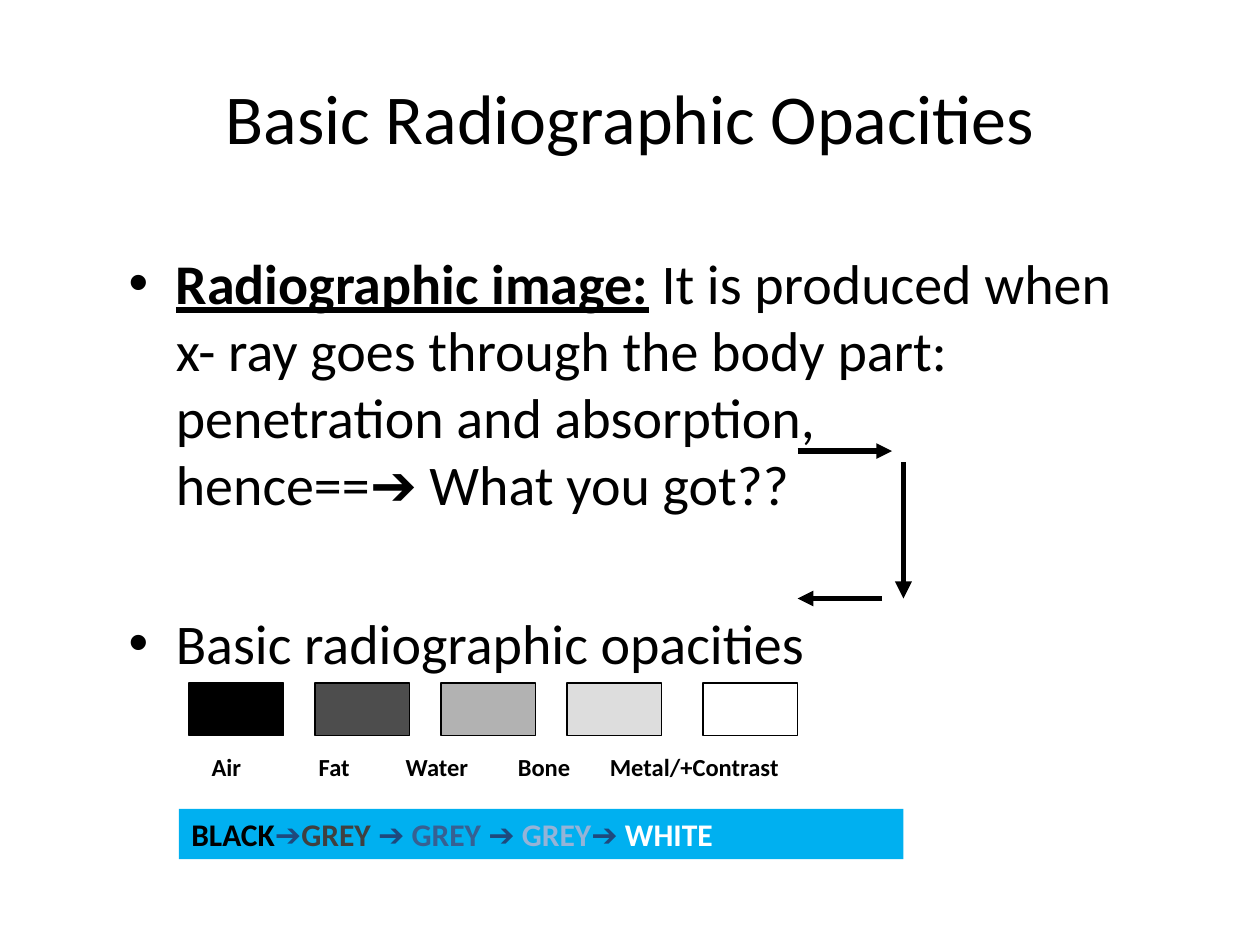
from dataclasses import dataclass

from lxml import etree
from pptx import Presentation
from pptx.dml.color import RGBColor
from pptx.enum import shapes, text
from pptx.oxml import ns
from pptx.util import Inches, Pt


@dataclass(frozen=True)
class Theme:
    font: str = "Calibri"
    black: str = "000000"
    white: str = "FFFFFF"
    strip: str = "00B0F0"
    arrow: str = "1F497D"
    title_size: int = 40
    body_size: int = 32
    strip_size: int = 18
    label_size: int = 14


THEME = Theme()

# Opacity, swatch left edge, swatch fill, label left edge
OPACITIES = [
    ("Air", 1.5, THEME.black, 1.68),
    ("Fat", 2.5, "4D4D4D", 2.53),
    ("Water", 3.5, "B2B2B2", 3.22),
    ("Bone", 4.5, "DDDDDD", 4.11),
    ("Metal/+Contrast", 5.58, THEME.white, 4.84),
]

# Start, end, width of each arrow
ARROWS = [
    ((6.33, 3.58), (7.08, 3.58), 3),
    ((7.17, 3.67), (7.17, 4.75), 3.25),
    ((7, 4.75), (6.33, 4.75), 3),
]

SHADES = [
    ("BLACK", THEME.black),
    ("➔", THEME.arrow),
    ("GREY", "404040"),
    (" ➔ ", THEME.arrow),
    ("GREY ", "376092"),
    ("➔ ", THEME.arrow),
    ("GREY", "95B3D7"),
    ("➔ ", THEME.arrow),
    ("WHITE", THEME.white),
]


def color(value):
    return RGBColor.from_string(value)


def style(paragraph, size, bold=None):
    font = paragraph.font
    font.name = THEME.font
    font.size = Pt(size)
    font.bold = bold
    font.color.rgb = color(THEME.black)


def place(shape, left, top, width, height):
    shape.left, shape.top = Inches(left), Inches(top)
    shape.width, shape.height = Inches(width), Inches(height)


def fill_title(title):
    place(title, 0.5, 0.3, 9, 1.25)
    title.text_frame.text = "Basic Radiographic Opacities"
    title.text_frame.auto_size = text.MSO_AUTO_SIZE.NONE
    style(title.text_frame.paragraphs[0], THEME.title_size)


def fill_body(body):
    place(body, 0.92, 1.92, 8.17, 4.07)
    frame = body.text_frame
    frame.auto_size = text.MSO_AUTO_SIZE.NONE

    definition = frame.paragraphs[0]
    term = definition.add_run()
    term.text = "Radiographic image:"
    term.font.bold = term.font.underline = True
    definition.add_run().text = (
        " It is produced when x- ray goes through the body part: "
        "penetration and absorption,"
    )

    question = frame.add_paragraph()
    question.text = "hence==➔ What you got??"
    properties = question._p.get_or_add_pPr()
    properties.set("indent", "0")
    etree.SubElement(properties, ns.qn("a:buNone"))

    opacities = frame.add_paragraph()
    opacities.text = "Basic radiographic opacities"

    for paragraph, space in ((definition, 0), (question, 0), (opacities, 52)):
        paragraph.space_before = Pt(space)
        style(paragraph, THEME.body_size)


def add_arrow(slide, start, end, width):
    connector = slide.shapes.add_connector(
        shapes.MSO_CONNECTOR.STRAIGHT, *map(Inches, start + end))
    connector.line.color.rgb = color(THEME.black)
    connector.line.width = Pt(width)
    line = connector.line._get_or_add_ln()
    etree.SubElement(line, ns.qn("a:tailEnd"), type="triangle")
    etree.SubElement(connector._element.spPr, ns.qn("a:effectLst"))


def add_rectangle(slide, left, top, width, height, fill, outlined=False):
    rectangle = slide.shapes.add_shape(
        shapes.MSO_SHAPE.RECTANGLE, *map(Inches, (left, top, width, height)))
    rectangle.shadow.inherit = False
    rectangle.fill.solid()
    rectangle.fill.fore_color.rgb = color(fill)
    if outlined:
        rectangle.line.color.rgb = color(THEME.black)
        rectangle.line.width = Pt(0.75)
    else:
        rectangle.line.fill.background()
    return rectangle


def add_labels(slide):
    """Write the opacity names on one line, spaced by tab stops."""
    box_left = 1.5
    box = slide.shapes.add_textbox(
        *map(Inches, (box_left, 5.92, 5.67, 0.33)))
    frame = box.text_frame
    frame.word_wrap = True
    first, *others = [label_left for _, _, _, label_left in OPACITIES]
    frame.margin_left = Inches(first - box_left)
    paragraph = frame.paragraphs[0]
    paragraph.text = "\t".join(name for name, *_ in OPACITIES)
    tabs = etree.SubElement(paragraph._p.get_or_add_pPr(), ns.qn("a:tabLst"))
    for left in others:
        etree.SubElement(tabs, ns.qn("a:tab"),
                         pos=str(Inches(left - first)), algn="l")
    style(paragraph, THEME.label_size, bold=True)


def add_shade_strip(slide):
    strip = add_rectangle(slide, 1.42, 6.42, 5.75, 0.4, THEME.strip)
    strip.text_frame.word_wrap = True
    paragraph = strip.text_frame.paragraphs[0]
    paragraph.alignment = text.PP_ALIGN.LEFT
    style(paragraph, THEME.strip_size, bold=True)
    for words, shade in SHADES:
        run = paragraph.add_run()
        run.text = words
        run.font.color.rgb = color(shade)


def main():
    presentation = Presentation()
    presentation.slide_width = Inches(10)
    presentation.slide_height = Inches(7.5)
    slide = presentation.slides.add_slide(presentation.slide_layouts[1])
    fill_title(slide.shapes.title)
    fill_body(slide.placeholders[1])
    for start, end, width in ARROWS:
        add_arrow(slide, start, end, width)
    for _, left, fill, _ in OPACITIES:
        add_rectangle(slide, left, 5.42, 0.75, 0.42, fill, outlined=True)
    add_labels(slide)
    add_shade_strip(slide)
    presentation.save("out.pptx")


if __name__ == "__main__":
    main()
